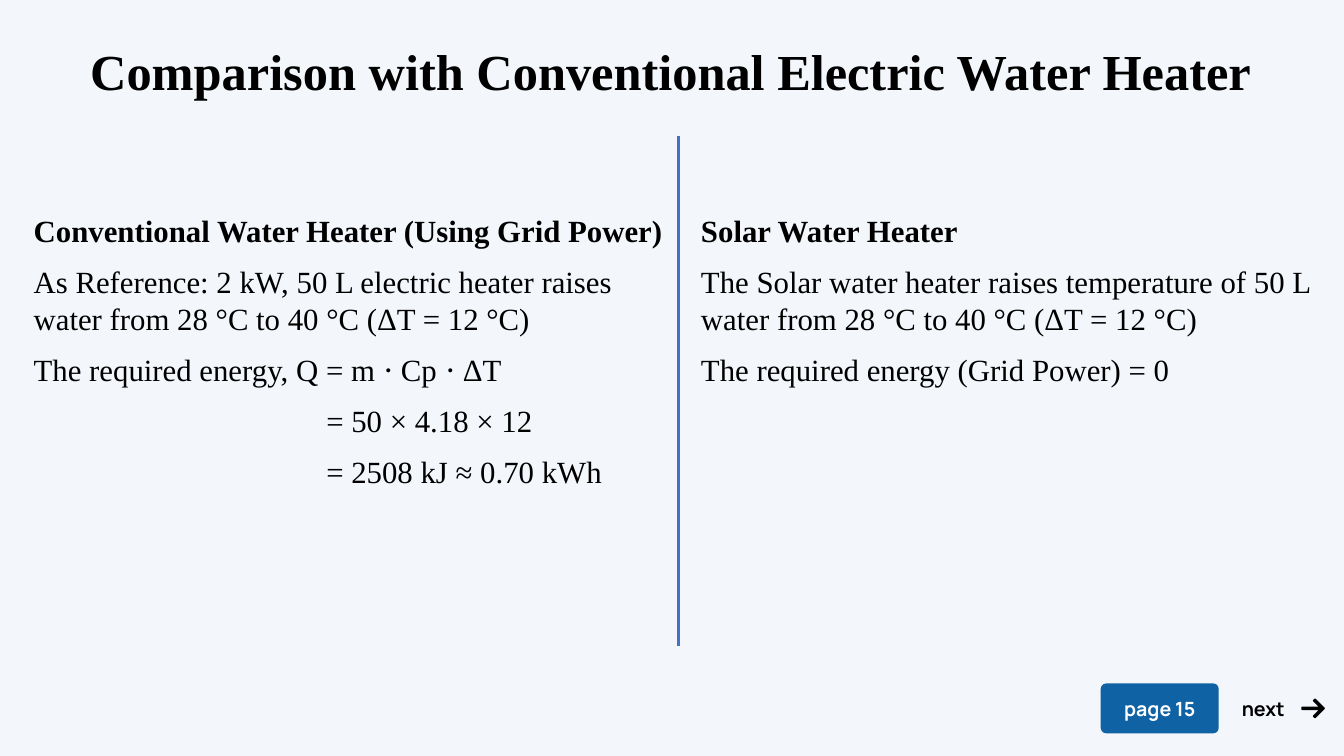
from dataclasses import dataclass
from lxml.etree import SubElement as Sub
from pptx import Presentation
from pptx.dml.color import RGBColor as RGB
from pptx.enum.shapes import MSO_CONNECTOR as Conn, MSO_SHAPE as Shape
from pptx.enum.text import PP_ALIGN as Align
from pptx.oxml.ns import qn
from pptx.util import Pt


@dataclass(frozen=True)
class Theme:
    back: RGB = RGB(0xF3, 0xF6, 0xFB)
    ink: RGB = RGB(0, 0, 0)
    light: RGB = RGB(255, 255, 255)
    blue: RGB = RGB(0x0F, 0x62, 0xA3)
    rule: RGB = RGB(0x44, 0x72, 0xC4)
    serif: str = "Times New Roman"
    sans: str = "Manrope"
    title: int = 72
    body: int = 44
    nav: int = 28
    lead: float = 1.2  # line height over type size


theme = Theme()


def write(box, lines, face, size, color=theme.ink, align=Align.LEFT, gap=0):
    """Add a text box of (text, bold, indent) lines."""
    frame = slide.shapes.add_textbox(*map(Pt, box)).text_frame
    frame.word_wrap = True
    for i, (text, bold, indent) in enumerate(lines):
        para = frame.add_paragraph() if i else frame.paragraphs[0]
        para.text = text
        para.alignment = align
        para.space_before = Pt(gap)
        para.line_spacing = Pt(size * theme.lead)
        para.font.name, para.font.size = face, Pt(size)
        para.font.bold, para.font.color.rgb = bold, color
        if indent:
            para._p.get_or_add_pPr().set("marL", str(Pt(indent)))


def paint(shape, color):
    """Give a shape a flat fill with no outline."""
    shape.shadow.inherit = False
    shape.fill.solid()
    shape.fill.fore_color.rgb = color
    shape.line.fill.background()


# Slide
deck = Presentation()
deck.slide_width, deck.slide_height = Pt(1920), Pt(1080)
slide = deck.slides.add_slide(deck.slide_layouts[6])
slide.background.fill.solid()
slide.background.fill.fore_color.rgb = theme.back

# Title
write((121.7, 53.3, 1738, 94.3),
      [("Comparison with Conventional Electric Water Heater", True, 0)],
      theme.serif, theme.title)

# Divider
rule = slide.shapes.add_connector(
    Conn.STRAIGHT, Pt(969.5), Pt(195), Pt(969.5), Pt(922.5))
rule.line.color.rgb = theme.rule
rule.line.width = Pt(5)
Sub(rule._element.spPr, qn("a:effectLst"))

# Two columns; the later steps line up under the first equals sign
step = 418
columns = [
    (41, [
        ("Conventional Water Heater (Using Grid Power)", True, 0),
        ("As Reference: 2 kW, 50 L electric heater raises water from "
         "28 °C to 40 °C (ΔT = 12 °C)", False, 0),
        ("The required energy, Q = m ⋅ Cp ⋅ ΔT", False, 0),
        ("= 50 × 4.18 × 12", False, step),
        ("= 2508 kJ ≈ 0.70 kWh", False, step),
    ]),
    (994.3, [
        ("Solar Water Heater", True, 0),
        ("The Solar water heater raises temperature of 50 L water from "
         "28 °C to 40 °C (ΔT = 12 °C)", False, 0),
        ("The required energy (Grid Power) = 0", False, 0),
    ]),
]
for left, lines in columns:
    write((left, 298.8, 913.7, 493.2), lines,
          theme.serif, theme.body, gap=20)

# Page button
button = slide.shapes.add_shape(
    Shape.ROUNDED_RECTANGLE, Pt(1572.5), Pt(976.3), Pt(168.5), Pt(71.3))
button.adjustments[0] = 0.107
paint(button, theme.blue)
write((1572.5, 991.4, 168.5, 41), [("page 15", True, 0)],
      theme.sans, theme.nav, theme.light, Align.CENTER)
write((1766.9, 991.4, 123.8, 41), [("next", True, 0)],
      theme.sans, theme.nav)

# Next arrow: the lower half, mirrored about its axis
x, y = 1859, 1012
half = [(0, 1.2), (0.6, 2.2), (2, 2.6), (24.5, 2.6), (17, 10), (16.6, 11),
        (17, 12), (18.6, 13.6), (19.6, 14), (20.8, 13.5), (33.2, 1.2)]
ring = half + [(33.8, 0)] + [(dx, -dy) for dx, dy in reversed(half)]
pen = slide.shapes.build_freeform(
    Pt(x + ring[0][0]), Pt(y + ring[0][1]), scale=1.0)
pen.add_line_segments([(Pt(x + dx), Pt(y + dy)) for dx, dy in ring[1:]])
paint(pen.convert_to_shape(), theme.ink)

deck.save("out.pptx")
